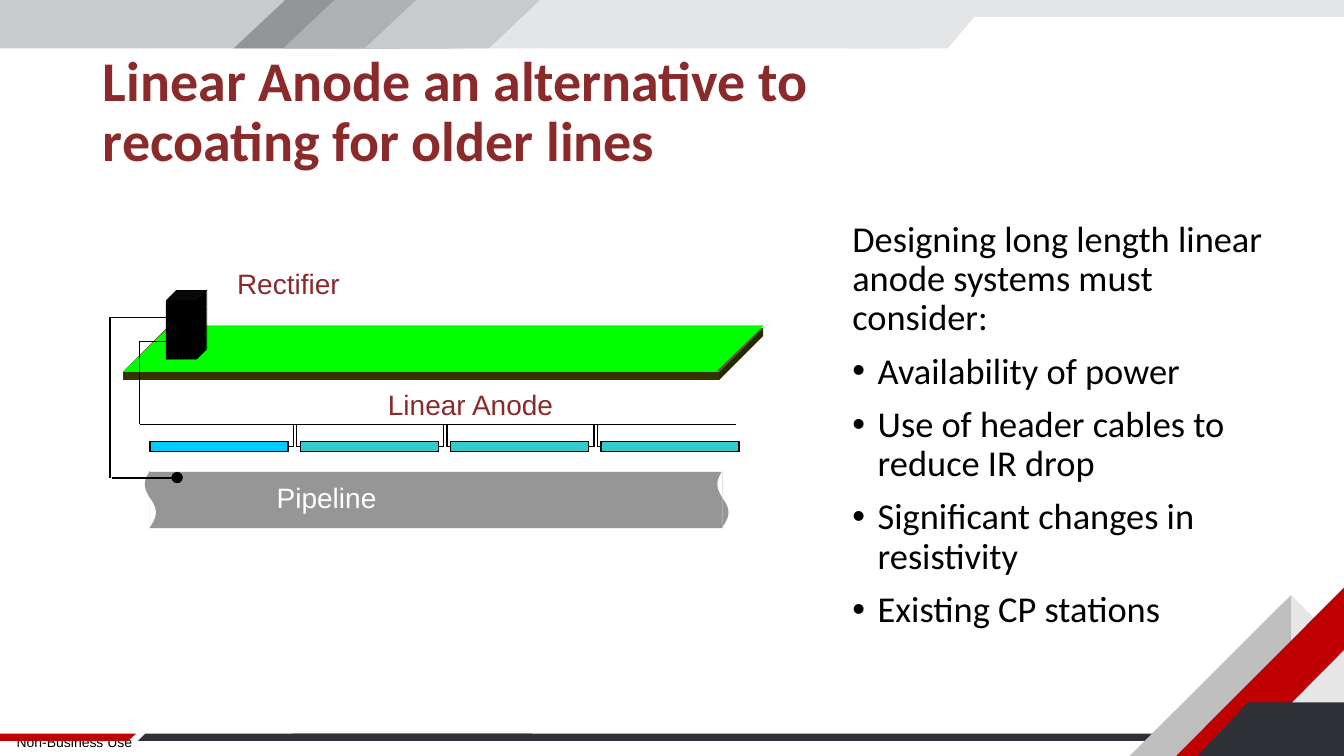
"""Build the slide on linear anodes as an alternative to recoating older pipelines."""
from dataclasses import dataclass
from math import pi, sin

from lxml.etree import SubElement
from pptx import Presentation
from pptx.dml.color import RGBColor
from pptx.enum.dml import MSO_PATTERN
from pptx.enum.shapes import MSO_CONNECTOR, MSO_SHAPE
from pptx.enum.text import MSO_ANCHOR, MSO_AUTO_SIZE, PP_ALIGN
from pptx.oxml.ns import qn
from pptx.shapes.autoshape import Shape
from pptx.shapes.connector import Connector
from pptx.slide import Slide
from pptx.util import Cm, Pt

Point = tuple[float, float]


@dataclass(frozen=True)
class Theme:
    maroon: str = "8A2A2B"
    black: str = "000000"
    white: str = "FFFFFF"
    red: str = "C00000"
    charcoal: str = "303138"
    dark_gray: str = "949598"
    mid_gray: str = "AFB0B2"
    silver: str = "C9CACB"
    pale_gray: str = "E4E5E6"
    peak_shade: str = "BFBFBF"
    peak_light: str = "E6E6E6"
    pipe: str = "969696"
    soil: str = "333300"
    grass: str = "00FF00"
    first_anode: str = "00CCFF"
    anode: str = "33CCCC"
    heading_font: str = "Calibri"
    label_font: str = "Arial"
    title_size: int = 40
    body_size: int = 26
    label_size: int = 20
    footer_size: int = 10


@dataclass(frozen=True)
class Box:
    left: float
    top: float
    width: float
    height: float


@dataclass(frozen=True)
class Block:
    kind: MSO_SHAPE
    box: Box
    color: str
    adjustment: float | None = None
    outline: float = 0


@dataclass(frozen=True)
class Polygon:
    color: str
    points: list[Point]


@dataclass(frozen=True)
class Label:
    text: str
    box: Box
    color: str
    size: int


THEME = Theme()
WIDTH, HEIGHT = 33.87, 19.05
BAND, STRIPE = (0, 1.22), (18.49, 18.67)
BUS_TOP = 10.69
ANODE, ANODE_STEP = Box(3.78, 11.13, 3.48, 0.25), 3.79
PIPE = Box(3.78, 11.89, 14.43, 1.42)


def slant(color: str, edges: tuple[float, float], top_left: float, bottom_left: float,
          bottom_right: float, top_right: float) -> Polygon:
    top, bottom = edges
    return Polygon(color, [(top_left, top), (bottom_left, bottom),
                           (bottom_right, bottom), (top_right, top)])


def bulge(color: str, left: float, top: float, bottom: float, depth: float) -> Polygon:
    steps = 12
    return Polygon(color, [(left + depth * sin(pi * step / steps),
                            top + (bottom - top) * step / steps) for step in range(steps + 1)])


BANDS = [
    Block(MSO_SHAPE.RECTANGLE, Box(21.69, 0, 12.18, 0.43), THEME.pale_gray),
    Block(MSO_SHAPE.RECTANGLE, Box(0, 0, 11.79, 1.22), THEME.silver),
    Block(MSO_SHAPE.RECTANGLE, Box(8.53, 0, 14.68, 1.22), THEME.pale_gray),
]
DECORATIONS = [
    slant(THEME.dark_gray, BAND, 7.19, 5.89, 10.06, 11.35),
    slant(THEME.mid_gray, BAND, 8.43, 7.14, 11.33, 12.62),
    slant(THEME.silver, BAND, 10.49, 9.19, 12.32, 13.61),
    slant(THEME.pale_gray, BAND, 22.43, 21.39, 23.88, 24.92),
    slant(THEME.charcoal, STRIPE, 7.37, 6.88, 31.8, 32.28),
    slant(THEME.charcoal, STRIPE, 3.66, 3.48, 13.21, 13.41),
    slant(THEME.red, STRIPE, 0, 0, 3.23, 3.43),
    Polygon(THEME.peak_light, [(32.54, 14.99), (WIDTH, 16.36), (WIDTH, HEIGHT), (32.54, HEIGHT)]),
    Polygon(THEME.peak_shade, [(28.47, HEIGHT), (32.54, HEIGHT), (32.54, 14.99)]),
    Polygon(THEME.red, [(WIDTH, 14.81), (WIDTH, 16.38), (31.22, HEIGHT), (29.64, HEIGHT)]),
    Polygon(THEME.charcoal, [(WIDTH, HEIGHT), (WIDTH, 17.7), (31.45, 17.7), (30.18, HEIGHT)]),
]
PIPE_ENDS = [
    bulge(color, left, top, bottom, depth)
    for left, upper, lower in ((PIPE.left, THEME.pipe, THEME.white),
                               (PIPE.left + PIPE.width, THEME.white, THEME.pipe))
    for color, top, bottom, depth in ((upper, 11.86, 12.55, -0.13), (lower, 12.55, 13.28, 0.15))
]
GROUND = [
    Block(MSO_SHAPE.CUBE, Box(3.1, 8.26, 16.13, 1.32), THEME.soil, 0.838),
    Block(MSO_SHAPE.PARALLELOGRAM, Box(3.1, 8.2, 16.15, 1.17), THEME.grass, 1.034),
]
RECTIFIER = Block(MSO_SHAPE.CUBE, Box(4.19, 7.32, 1.02, 1.73), THEME.black, 0.25, 0.5)
PIPE_JOINT = Block(MSO_SHAPE.OVAL, Box(4.34, 11.91, 0.25, 0.25), THEME.black, outline=1)
WIRES = [
    ((3.53, BUS_TOP), (18.54, BUS_TOP)),
    ((3.51, BUS_TOP), (3.51, 8.61)),
    ((3.51, 8.61), (4.24, 8.61)),
    ((4.19, 8), (2.77, 8)),
    ((2.77, 8), (2.77, 12.04)),
    ((2.82, 12.04), (4.39, 12.04)),
]
LABELS = [
    Label("Rectifier", Box(5.44, 6.58, 3.66, 1.09), THEME.maroon, THEME.label_size),
    Label("Pipeline", Box(6.45, 11.99, 3.56, 1.09), THEME.white, THEME.label_size),
    Label("Linear Anode", Box(8.71, 9.63, 6.3, 1.09), THEME.maroon, THEME.label_size),
]
FOOTER = Label("Non-Business Use", Box(0, 18.36, 3.73, 0.69), THEME.black, THEME.footer_size)
INTRODUCTION = "Designing long length linear anode systems must consider:"
CONSIDERATIONS = ["Availability of power", "Use of header cables to reduce IR drop",
                  "Significant changes in resistivity", "Existing CP stations"]


def lengths(box: Box) -> tuple[Cm, Cm, Cm, Cm]:
    return Cm(box.left), Cm(box.top), Cm(box.width), Cm(box.height)


def paint(shape: Shape, color: str, outline: float = 0) -> None:
    shape.shadow.inherit = False
    shape.fill.solid()
    shape.fill.fore_color.rgb = RGBColor.from_string(color)
    if outline:
        shape.line.color.rgb = RGBColor.from_string(THEME.black)
        shape.line.width = Pt(outline)
    else:
        shape.line.fill.background()


def draw_block(page: Slide, block: Block) -> Shape:
    shape = page.shapes.add_shape(block.kind, *lengths(block.box))
    if block.adjustment is not None:
        shape.adjustments[0] = block.adjustment
    paint(shape, block.color, block.outline)
    return shape


def draw_polygon(page: Slide, polygon: Polygon) -> None:
    first, *others = [(Cm(x), Cm(y)) for x, y in polygon.points]
    builder = page.shapes.build_freeform(*first)
    builder.add_line_segments(others)
    paint(builder.convert_to_shape(), polygon.color)


def draw_wire(page: Slide, start: Point, end: Point) -> Connector:
    wire = page.shapes.add_connector(MSO_CONNECTOR.STRAIGHT, *map(Cm, start + end))
    wire.line.color.rgb = RGBColor.from_string(THEME.black)
    wire.line.width = Pt(1)
    SubElement(wire._element.spPr, qn("a:effectLst"))
    return wire


def style(para, font: str, size: int, color: str, bold: bool = False) -> None:
    for span in para.runs:
        span.font.name, span.font.size, span.font.bold = font, Pt(size), bold
        span.font.color.rgb = RGBColor.from_string(color)


def draw_label(page: Slide, label: Label, align: PP_ALIGN = PP_ALIGN.CENTER) -> Shape:
    shape = page.shapes.add_textbox(*lengths(label.box))
    shape.text_frame.word_wrap = True
    shape.text_frame.text = label.text
    para = shape.text_frame.paragraphs[0]
    para.alignment = align
    style(para, THEME.label_font, label.size, label.color)
    return shape


def draw_footer(page: Slide) -> None:
    frame = draw_label(page, FOOTER, PP_ALIGN.LEFT).text_frame
    frame.margin_left = frame.margin_right = frame.margin_top = frame.margin_bottom = 0
    frame.margin_left = Cm(0.42)
    frame.vertical_anchor = MSO_ANCHOR.MIDDLE


def draw_title(page: Slide) -> None:
    title = page.shapes.title
    title.left, title.top, title.width, title.height = lengths(Box(2.34, 1.02, 20.52, 3.68))
    frame = title.text_frame
    frame.text = "Linear Anode an alternative to recoating for older lines"
    frame.auto_size, frame.vertical_anchor = MSO_AUTO_SIZE.NONE, MSO_ANCHOR.MIDDLE
    para = frame.paragraphs[0]
    para.alignment, para.line_spacing = PP_ALIGN.LEFT, 0.9
    style(para, THEME.heading_font, THEME.title_size, THEME.maroon, True)


def draw_anodes(page: Slide) -> None:
    anodes = [draw_block(page, Block(
        MSO_SHAPE.RECTANGLE,
        Box(ANODE.left + index * ANODE_STEP, ANODE.top, ANODE.width, ANODE.height),
        THEME.anode if index else THEME.first_anode, outline=1)) for index in range(4)]
    middle = ANODE.top + ANODE.height / 2
    for index, pair in enumerate(zip(anodes, anodes[1:])):
        right = ANODE.left + ANODE.width + index * ANODE_STEP
        for anode, side, riser in zip(pair, (3, 1), (right + 0.13, right + 0.21)):
            draw_wire(page, (right, middle), (riser, middle)).begin_connect(anode, side)
            draw_wire(page, (riser, middle), (riser, BUS_TOP))


def draw_body(page: Slide) -> None:
    frame = page.shapes.add_textbox(*lengths(Box(21.23, 5.44, 11.25, 11.2))).text_frame
    frame.word_wrap = True
    frame.text = "\n".join([INTRODUCTION, *CONSIDERATIONS])
    for index, para in enumerate(frame.paragraphs):
        if index:
            properties = para._p.get_or_add_pPr()
            properties.set("marL", str(Cm(0.64)))
            properties.set("indent", str(-Cm(0.64)))
            SubElement(properties, qn("a:buFont"), typeface=THEME.label_font)
            SubElement(properties, qn("a:buChar"), char="•")
            para.space_before = Pt(10)
        para.line_spacing = 0.9
        style(para, THEME.heading_font, THEME.body_size, THEME.black)


def main() -> None:
    deck = Presentation()
    deck.slide_width, deck.slide_height = Cm(WIDTH), Cm(HEIGHT)
    page = deck.slides.add_slide(deck.slide_layouts[5])
    draw_title(page)
    draw_footer(page)
    for band in BANDS:
        draw_block(page, band)
    for decoration in DECORATIONS:
        draw_polygon(page, decoration)
    draw_block(page, Block(MSO_SHAPE.RECTANGLE, PIPE, THEME.pipe))
    for pipe_end in PIPE_ENDS:
        draw_polygon(page, pipe_end)
    for layer in GROUND:
        draw_block(page, layer)
    draw_anodes(page)
    rectifier = draw_block(page, RECTIFIER)
    rectifier.fill.patterned()
    rectifier.fill.pattern = MSO_PATTERN.DARK_DOWNWARD_DIAGONAL
    rectifier.fill.fore_color.rgb = RGBColor.from_string(THEME.black)
    rectifier.fill.back_color.rgb = RGBColor.from_string(THEME.black)
    for start, end in WIRES:
        draw_wire(page, start, end)
    draw_block(page, PIPE_JOINT)
    for label in LABELS:
        draw_label(page, label)
    draw_body(page)
    deck.save("out.pptx")


if __name__ == "__main__":
    main()
